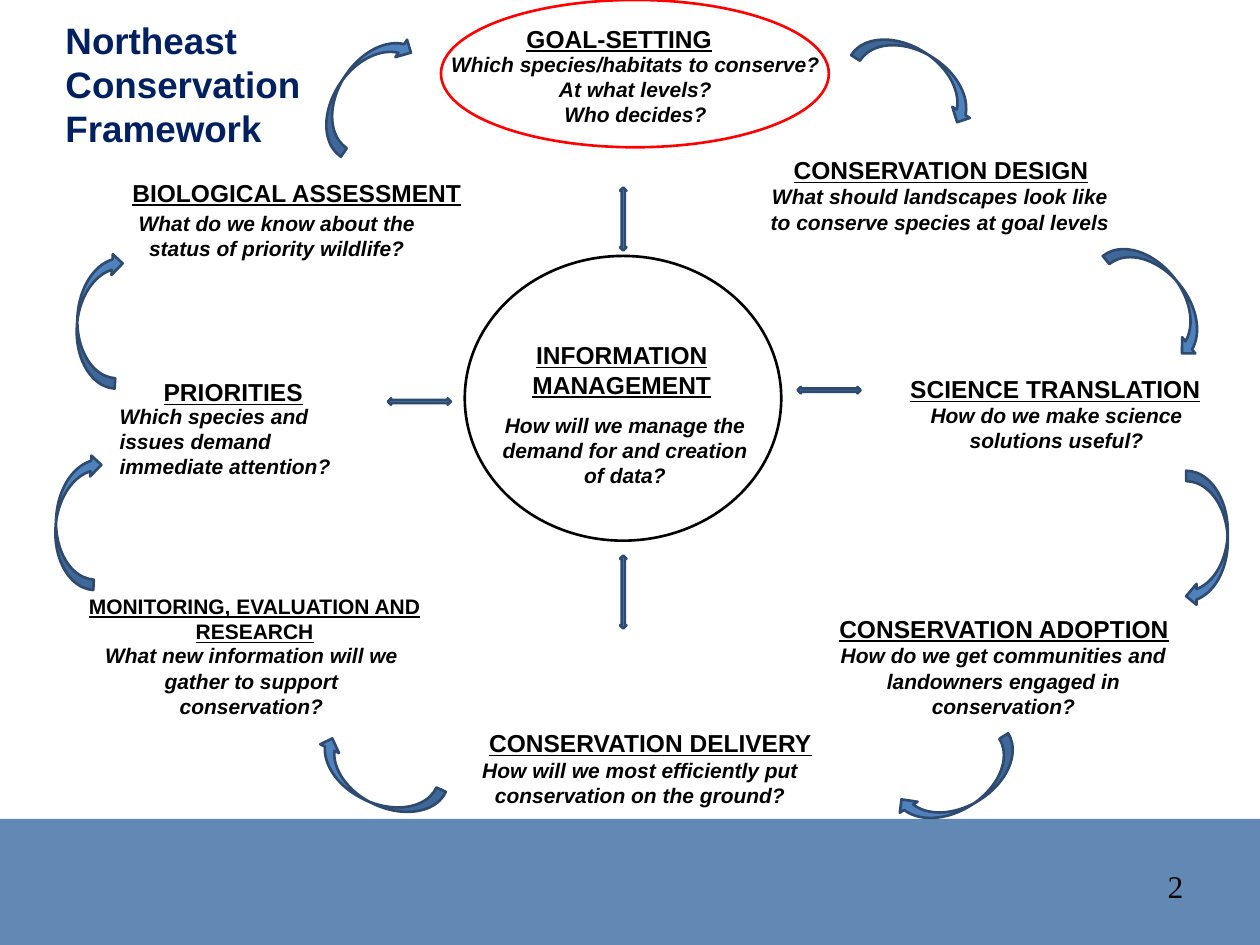
from dataclasses import dataclass

from pptx import Presentation
from pptx import util as u
from pptx.dml.color import RGBColor
from pptx.enum import shapes, text

SHAPE = shapes.MSO_SHAPE
LEFT, CENTER = text.PP_ALIGN.LEFT, text.PP_ALIGN.CENTER


@dataclass(frozen=True)
class Theme:
    font: str = "Arial"
    number_font: str = "Times New Roman"
    ink: str = "000000"
    title: str = "002060"
    band: str = "6289B4"
    arrow: str = "4F81BD"
    arrow_line: str = "2E4B6F"
    highlight: str = "FF0000"
    title_size: float = 21
    number_size: float = 18
    heading_size: float = 14
    body_size: float = 12
    line_width: float = 1.5


class Diagram:
    def __init__(self, slide, theme):
        self.slide = slide
        self.theme = theme

    def fill_text(self, box, lines, size, color, align=LEFT, font=None,
                  inset=(0.25, 0.13), bold=None, italic=None, underline=None):
        """Fill a box with one paragraph per line."""
        frame = box.text_frame
        frame.word_wrap = True
        frame.auto_size = text.MSO_AUTO_SIZE.NONE
        frame.vertical_anchor = text.MSO_ANCHOR.TOP
        frame.margin_left = frame.margin_right = u.Cm(inset[0])
        frame.margin_top = frame.margin_bottom = u.Cm(inset[1])
        for index, line in enumerate(lines):
            para = frame.add_paragraph() if index else frame.paragraphs[0]
            para.alignment = align
            span = para.add_run()
            span.text = line
            span.font.name = font or self.theme.font
            span.font.size = u.Pt(size)
            span.font.color.rgb = RGBColor.from_string(color)
            span.font.bold = bold
            span.font.italic = italic
            span.font.underline = underline

    def title(self, lines, place):
        box = self.slide.shapes.title
        box.left, box.top, box.width, box.height = map(u.Cm, place)
        self.fill_text(box, lines, self.theme.title_size, self.theme.title, bold=True)

    def text_box(self, lines, place, size, **style):
        box = self.slide.shapes.add_textbox(*map(u.Cm, place))
        self.fill_text(box, lines, size, self.theme.ink, **style)

    def heading(self, line, place, align=LEFT):
        self.text_box([line], (*place, 0.94), self.theme.heading_size, align=align,
                      inset=(0.33, 0.18), bold=True, underline=True)

    def question(self, lines, place, align=CENTER):
        self.text_box(lines, place, self.theme.body_size, align=align,
                      bold=True, italic=True)

    def shape(self, kind, place, fill=None, line=None, rotation=0):
        shape = self.slide.shapes.add_shape(kind, *map(u.Cm, place))
        shape.shadow.inherit = False
        shape.rotation = rotation
        if fill:
            shape.fill.solid()
            shape.fill.fore_color.rgb = RGBColor.from_string(fill)
        else:
            shape.fill.background()
        if line:
            shape.line.color.rgb = RGBColor.from_string(line)
            shape.line.width = u.Pt(self.theme.line_width)
        else:
            shape.line.fill.background()

    def arrow(self, kind, place, rotation=0):
        self.shape(kind, place, self.theme.arrow, self.theme.arrow_line, rotation)


# Heading: left, top, width. Question: left, top, width, height.
STAGES = [
    ("GOAL-SETTING", (10.06, 0.3, 4.85), CENTER,
     ["Which species/habitats to conserve? At what levels?", "Who decides?"],
     (8.71, 0.9, 8.2, 2.2), CENTER),
    ("CONSERVATION DESIGN", (15.67, 2.95, 6.81), LEFT,
     ["What should landscapes look like to conserve species at goal levels"],
     (15.24, 3.58, 7.42, 1.27), CENTER),
    ("SCIENCE TRANSLATION", (17.81, 7.37, 6.93), CENTER,
     ["How do we make science solutions useful?"], (18.14, 7.98, 6.32, 1.27), CENTER),
    ("CONSERVATION ADOPTION", (16.59, 12.19, 7.54), LEFT,
     ["How do we get communities and landowners engaged in conservation?"],
     (16.33, 12.83, 7.8, 1.8), CENTER),
    ("CONSERVATION DELIVERY", (9.53, 14.5, 7.62), LEFT,
     ["How will we most efficiently put conservation on the ground?"],
     (9.3, 15.14, 7.21, 1.27), CENTER),
    ("PRIORITIES", (2.97, 7.42, 7.19), LEFT,
     ["Which species and issues demand immediate attention?"],
     (2.16, 8, 5.74, 1.8), LEFT),
    ("BIOLOGICAL ASSESSMENT", (2.34, 3.4, 8.56), LEFT,
     ["What do we know about the status of priority wildlife?"],
     (2.34, 4.11, 6.48, 1.27), CENTER),
    ("INFORMATION MANAGEMENT", (8.94, 6.68, 7.19), CENTER,
     ["How will we manage the demand for and creation of data?"],
     (9.68, 8.18, 5.84, 1.8), CENTER),
]

# Left, top, rotation of each arrow around the cycle.
CYCLE_ARROWS = [
    (0.18, 10.08, 273.7), (0.61, 6.02, 273.7), (5.92, 1.37, 303.9), (17.17, 1.07, 32.3),
    (22.05, 5.54, 50.9), (22.96, 10.44, 90), (18.01, 15.44, 148.2), (6.2, 15.34, 205.2),
]

HUB_ARROWS = [
    (SHAPE.UP_DOWN_ARROW, (12.5, 3.78, 0.13, 1.27)),
    (SHAPE.LEFT_RIGHT_ARROW, (16.08, 7.8, 1.27, 0.13)),
    (SHAPE.UP_DOWN_ARROW, (12.5, 11.2, 0.13, 1.47)),
    (SHAPE.LEFT_RIGHT_ARROW, (7.82, 8.03, 1.27, 0.13)),
]


def main():
    theme = Theme()
    deck = Presentation()
    deck.slide_width, deck.slide_height = u.Cm(25.4), u.Cm(19.05)
    page = deck.slides.add_slide(deck.slide_layouts[5])
    diagram = Diagram(page, theme)

    diagram.shape(SHAPE.RECTANGLE, (0, 16.51, 25.4, 2.54), fill=theme.band)
    diagram.title(["Northeast", "Conservation Framework"], (1.07, 0.23, 6.68, 2.95))
    diagram.shape(SHAPE.OVAL, (9.37, 5.16, 6.38, 5.74), line=theme.ink)

    for heading, heading_place, heading_align, question, place, align in STAGES:
        diagram.question(question, place, align)
        diagram.heading(heading, heading_place, heading_align)
    diagram.text_box(["MONITORING, EVALUATION AND RESEARCH"], (0.84, 11.84, 8.59, 1.27),
                     theme.body_size, align=CENTER, bold=True, underline=True)
    diagram.question(["What new information will we gather to support conservation?"],
                     (1.73, 12.83, 6.68, 1.8))

    for left, top, rotation in CYCLE_ARROWS:
        diagram.arrow(SHAPE.CURVED_DOWN_ARROW, (left, top, 2.74, 0.84), rotation)
    for kind, place in HUB_ARROWS:
        diagram.arrow(kind, place)

    diagram.text_box(["2"], (23.29, 17.35, 1.47, 1.02), theme.number_size,
                     font=theme.number_font)
    diagram.shape(SHAPE.OVAL, (8.89, 0, 7.82, 2.97), line=theme.highlight)
    deck.save("out.pptx")


if __name__ == "__main__":
    main()
